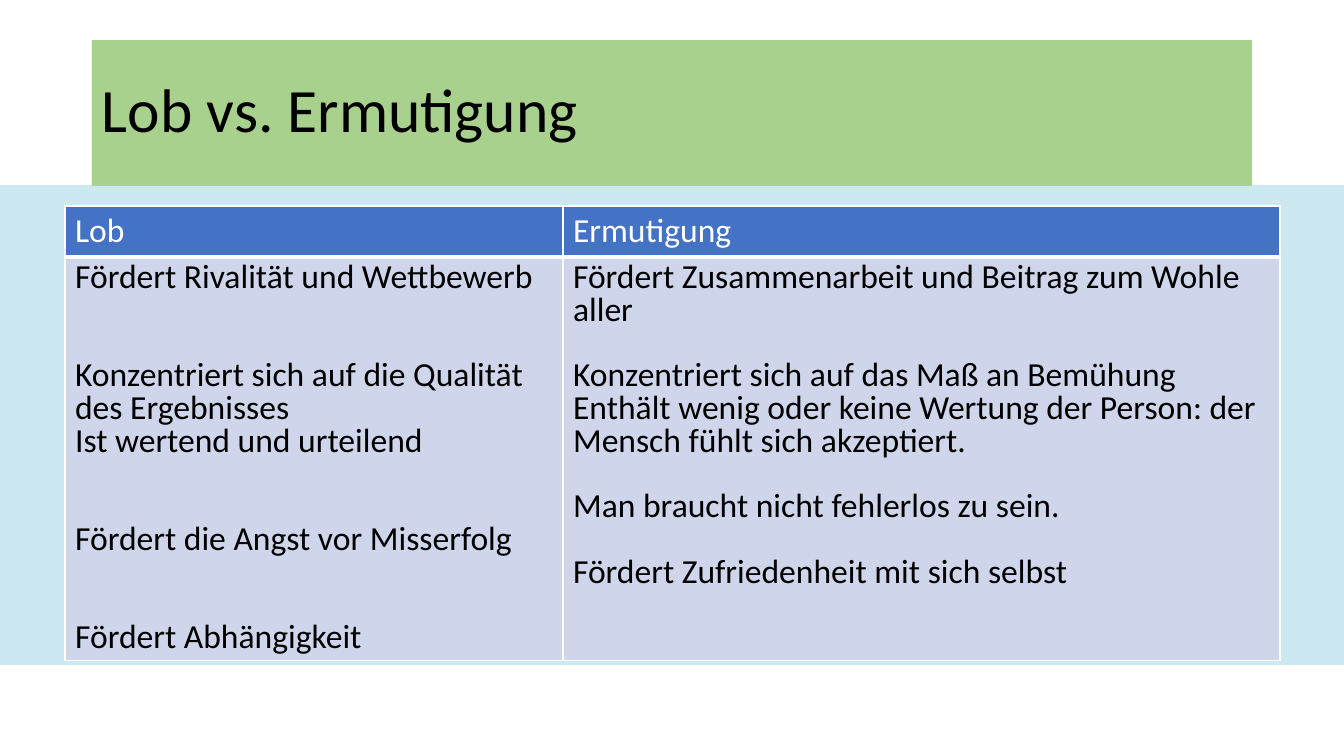
from dataclasses import dataclass

from lxml.etree import SubElement
from pptx import Presentation
from pptx.dml.color import RGBColor
from pptx.enum.shapes import MSO_SHAPE
from pptx.enum.text import MSO_ANCHOR, PP_ALIGN
from pptx.oxml import parse_xml
from pptx.oxml.ns import nsdecls, qn
from pptx.util import Pt

EMU_PER_PX = 914400 / 100.8


@dataclass(frozen=True)
class Theme:
    font: str = "Calibri"
    title_size: int = 44
    table_size: int = 24
    gap: float = 23.4  # height in points of one table text line
    text: str = "000000"
    border: str = "FFFFFF"
    band: str = "CCE9F2"
    title_fill: str = "A9D18E"
    header_fill: str = "4472C4"
    header_text: str = "FFFFFF"
    body_fill: str = "CFD5EA"


THEME = Theme()

HEADERS = ["Lob", "Ermutigung"]
# Each statement is preceded by a number of free lines.
STATEMENTS = [
    [
        (0, "Fördert Rivalität und Wettbewerb"),
        (2, "Konzentriert sich auf die Qualität des Ergebnisses"),
        (0, "Ist wertend und urteilend"),
        (2, "Fördert die Angst vor Misserfolg"),
        (2, "Fördert Abhängigkeit"),
    ],
    [
        (0, "Fördert Zusammenarbeit und Beitrag zum Wohle aller"),
        (1, "Konzentriert sich auf das Maß an Bemühung"),
        (0, "Enthält wenig oder keine Wertung der Person: der Mensch fühlt sich akzeptiert."),
        (1, "Man braucht nicht fehlerlos zu sein."),
        (1, "Fördert Zufriedenheit mit sich selbst"),
    ],
]


def px(length):
    return round(length * EMU_PER_PX)


def format_text(paragraph, size, color):
    for run in paragraph.runs:
        run.font.name = THEME.font
        run.font.size = Pt(size)
        run.font.color.rgb = RGBColor.from_string(color)


def add_rectangle(slide, left, top, width, height, fill):
    shape = slide.shapes.add_shape(
        MSO_SHAPE.RECTANGLE, px(left), px(top), px(width), px(height))
    shape.shadow.inherit = False
    shape.fill.solid()
    shape.fill.fore_color.rgb = RGBColor.from_string(fill)
    shape.line.fill.background()
    return shape


def add_title(slide, text):
    shape = add_rectangle(slide, 92, 40, 1160, 146, THEME.title_fill)
    text_frame = shape.text_frame
    text_frame.text = text
    text_frame.word_wrap = True
    text_frame.vertical_anchor = MSO_ANCHOR.MIDDLE
    paragraph = text_frame.paragraphs[0]
    paragraph.alignment = PP_ALIGN.LEFT
    paragraph.line_spacing = 0.9
    format_text(paragraph, THEME.title_size, THEME.text)


def set_borders(cell, bottom_width):
    properties = cell._tc.get_or_add_tcPr()
    widths = {"lnL": 1, "lnR": 1, "lnT": 1, "lnB": bottom_width}
    for position, (side, width) in enumerate(widths.items()):
        line = parse_xml(f'<a:{side} {nsdecls("a")} w="{Pt(width)}"/>')
        fill = SubElement(line, qn("a:solidFill"))
        SubElement(fill, qn("a:srgbClr"), val=THEME.border)
        properties.insert(position, line)


def style_cell(cell, fill, bottom_width):
    cell.fill.solid()
    cell.fill.fore_color.rgb = RGBColor.from_string(fill)
    set_borders(cell, bottom_width)


def fill_header(cell, text):
    cell.text_frame.text = text
    format_text(cell.text_frame.paragraphs[0], THEME.table_size, THEME.header_text)
    style_cell(cell, THEME.header_fill, 3)


def fill_statements(cell, statements):
    text_frame = cell.text_frame
    text_frame.text = "\n".join(text for _, text in statements)
    for paragraph, (free_lines, _) in zip(text_frame.paragraphs, statements):
        paragraph.line_spacing = 0.8
        if free_lines:
            paragraph.space_before = Pt(free_lines * THEME.gap)
        format_text(paragraph, THEME.table_size, THEME.text)
    style_cell(cell, THEME.body_fill, 1)


def add_comparison(slide):
    widths, heights = (498, 717), (50, 400)
    table = slide.shapes.add_table(
        2, 2, px(65), px(206), px(sum(widths)), px(sum(heights))).table
    for row, height in zip(table.rows, heights):
        row.height = px(height)
    for index, width in enumerate(widths):
        table.columns[index].width = px(width)
        fill_header(table.cell(0, index), HEADERS[index])
        fill_statements(table.cell(1, index), STATEMENTS[index])


def main():
    presentation = Presentation()
    presentation.slide_width = px(1344)
    presentation.slide_height = px(756)
    slide = presentation.slides.add_slide(presentation.slide_layouts[6])
    add_rectangle(slide, 0, 185, 1344, 480, THEME.band)
    add_comparison(slide)
    add_title(slide, "Lob vs. Ermutigung")
    presentation.save("out.pptx")


if __name__ == "__main__":
    main()
